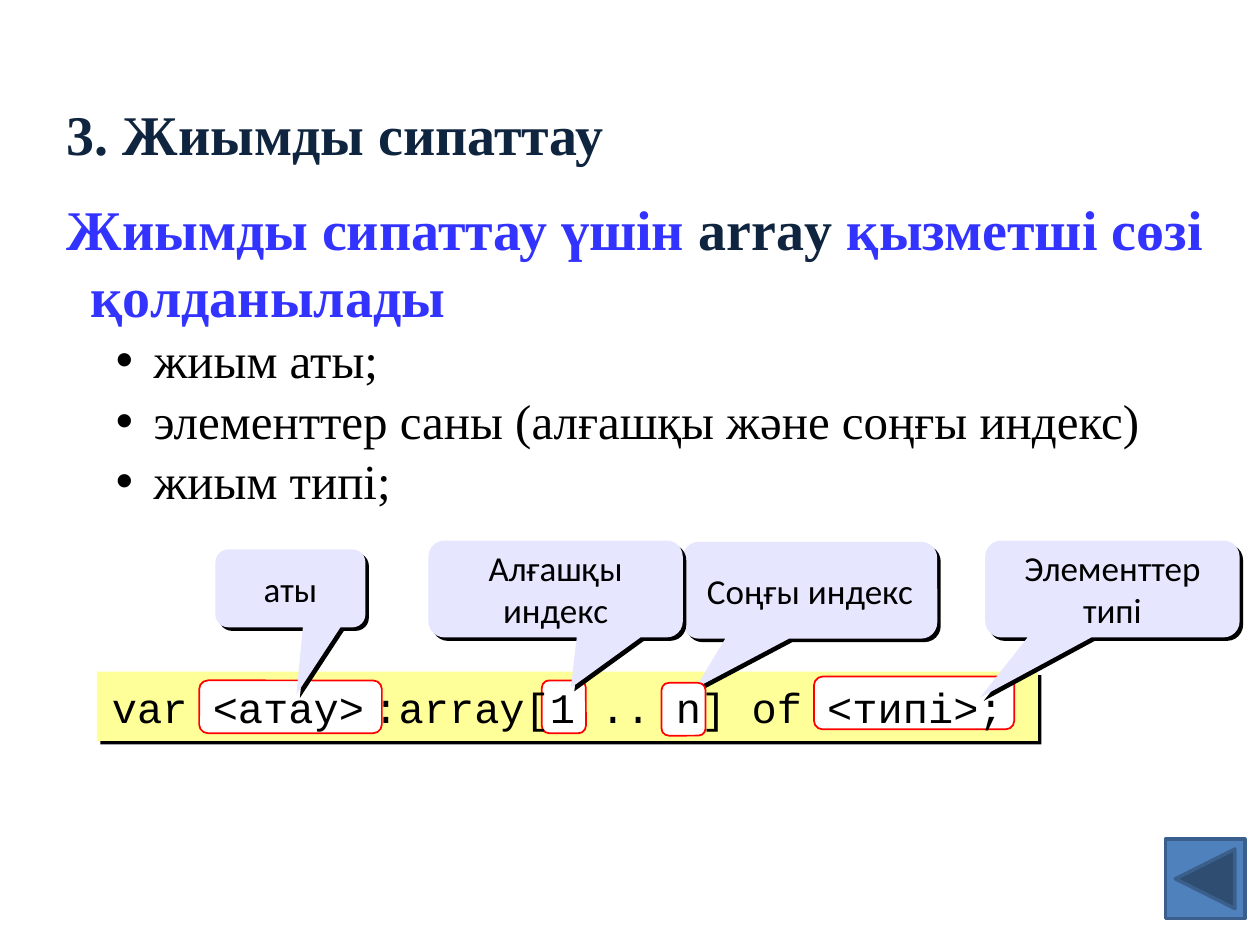
from lxml.etree import SubElement
from pptx import Presentation
from pptx.dml.color import RGBColor
from pptx.enum.shapes import MSO_SHAPE
from pptx.enum.text import MSO_ANCHOR, PP_ALIGN
from pptx.oxml.ns import qn
from pptx.util import Pt

BLACK = RGBColor(0x00, 0x00, 0x00)
WHITE = RGBColor(0xFF, 0xFF, 0xFF)
NAVY = RGBColor(0x0F, 0x24, 0x3E)
BLUE = RGBColor(0x33, 0x33, 0xFF)
RED = RGBColor(0xFF, 0x00, 0x00)
YELLOW = RGBColor(0xFF, 0xFF, 0x99)
LAVENDER = RGBColor(0xE6, 0xE6, 0xFF)
BUTTON_FILL = RGBColor(0x4F, 0x81, 0xBD)
BUTTON_LINE = RGBColor(0x3A, 0x5F, 0x8C)

SERIF = "Times New Roman"
CORNER = 0.167


def add_run(paragraph, text, *, size, font, color=BLACK, bold=False):
    run = paragraph.add_run()
    run.text = text
    run.font.size = Pt(size)
    run.font.name = font
    run.font.bold = bold
    run.font.color.rgb = color


def set_indent(paragraph, margin, hanging, bullet=None):
    properties = paragraph._p.get_or_add_pPr()
    properties.set("marL", str(Pt(margin)))
    properties.set("indent", str(-Pt(hanging)))
    if bullet:
        SubElement(properties, qn("a:buFont"), typeface="Arial")
        SubElement(properties, qn("a:buChar"), char=bullet)


def add_hard_shadow(shape):
    shape.shadow.inherit = False
    effects = shape._element.spPr.find(qn("a:effectLst"))
    shadow = SubElement(effects, qn("a:outerShdw"), dist=str(Pt(2.8)),
                        dir="2700000", algn="ctr", rotWithShape="0")
    SubElement(shadow, qn("a:srgbClr"), val=str(BLACK))


def add_panel(slide, kind, box, *, fill, line=None, line_width=1, adjustments=()):
    panel = slide.shapes.add_shape(kind, *map(Pt, box))
    panel.shadow.inherit = False
    panel.fill.solid()
    panel.fill.fore_color.rgb = fill
    if line is None:
        panel.line.fill.background()
    else:
        panel.line.color.rgb = line
        panel.line.width = Pt(line_width)
    for index, value in enumerate(adjustments):
        panel.adjustments[index] = value
    return panel


def add_text_frame(slide, box):
    frame = slide.shapes.add_textbox(*map(Pt, box)).text_frame
    frame.word_wrap = True
    return frame


def add_outline(slide):
    frame = add_text_frame(slide, (31, 53.3, 694.8, 453.6))
    headings = [
        [("3. Жиымды сипаттау", NAVY)],
        [("Жиымды сипаттау үшін ", BLUE), ("array ", NAVY),
         ("қызметші сөзі қолданылады", BLUE)],
    ]
    details = ["жиым аты;", "элементтер саны (алғашқы және соңғы индекс)", "жиым типі;"]

    for index, parts in enumerate(headings):
        heading = frame.add_paragraph() if index else frame.paragraphs[0]
        heading.space_before = Pt(16 if index else 3)
        set_indent(heading, 13.7, 13.7)
        for text, color in parts:
            add_run(heading, text, size=32, font=SERIF, color=color, bold=True)

    for text in details:
        detail = frame.add_paragraph()
        detail.level = 1
        detail.line_spacing = 0.9
        detail.space_before = Pt(4.2)
        set_indent(detail, 49.7, 21.6, "•")
        add_run(detail, text, size=28, font=SERIF)


def add_callout(slide, text, box, tip):
    callout = add_panel(slide, MSO_SHAPE.ROUNDED_RECTANGULAR_CALLOUT, box,
                        fill=LAVENDER, adjustments=(*tip, CORNER))
    add_hard_shadow(callout)
    frame = callout.text_frame
    frame.word_wrap = True
    frame.vertical_anchor = MSO_ANCHOR.MIDDLE
    label = frame.paragraphs[0]
    label.alignment = PP_ALIGN.CENTER
    add_run(label, text, size=20, font="Calibri")


def add_declaration(slide):
    for left, top, width in [(113.8, 388.8, 104.4), (309.6, 388.8, 25.2),
                             (378, 390.2, 25.2), (465.1, 386.6, 114.5)]:
        add_panel(slide, MSO_SHAPE.ROUNDED_RECTANGLE, (left, top, width, 30.2),
                  fill=WHITE, line=RED, adjustments=(CORNER,))
    code = add_text_frame(slide, (56.9, 385.9, 578.9, 36.7)).paragraphs[0]
    code.space_before = Pt(5)
    for text, size in [("var <атау>", 24), (" ", 9), (":array[1 .. n] of <типі>;", 24)]:
        add_run(code, text, size=size, font="Courier New")


def main():
    presentation = Presentation()
    presentation.slide_width, presentation.slide_height = Pt(720), Pt(540)
    slide = presentation.slides.add_slide(presentation.slide_layouts[6])

    add_hard_shadow(add_panel(slide, MSO_SHAPE.RECTANGLE, (55.4, 383.8, 537.8, 39.6),
                              fill=YELLOW))
    add_outline(slide)
    add_callout(slide, "Соңғы индекс", (390.2, 309.6, 145.4, 55.4), (-0.45, 1.01))
    add_declaration(slide)
    add_callout(slide, "Алғашқы индекс", (244.8, 308.9, 145.4, 55.4), (0.06, 1.02))
    add_callout(slide, "Элементтер типі", (563, 308.9, 145.4, 55.4), (-0.52, 1.12))
    add_callout(slide, "аты", (123.1, 313.9, 85.7, 44.6), (0.04, 1.36))
    add_panel(slide, MSO_SHAPE.ACTION_BUTTON_BACK_OR_PREVIOUS, (666, 479.5, 45.4, 45.4),
              fill=BUTTON_FILL, line=BUTTON_LINE, line_width=2)

    presentation.save("out.pptx")


if __name__ == "__main__":
    main()
